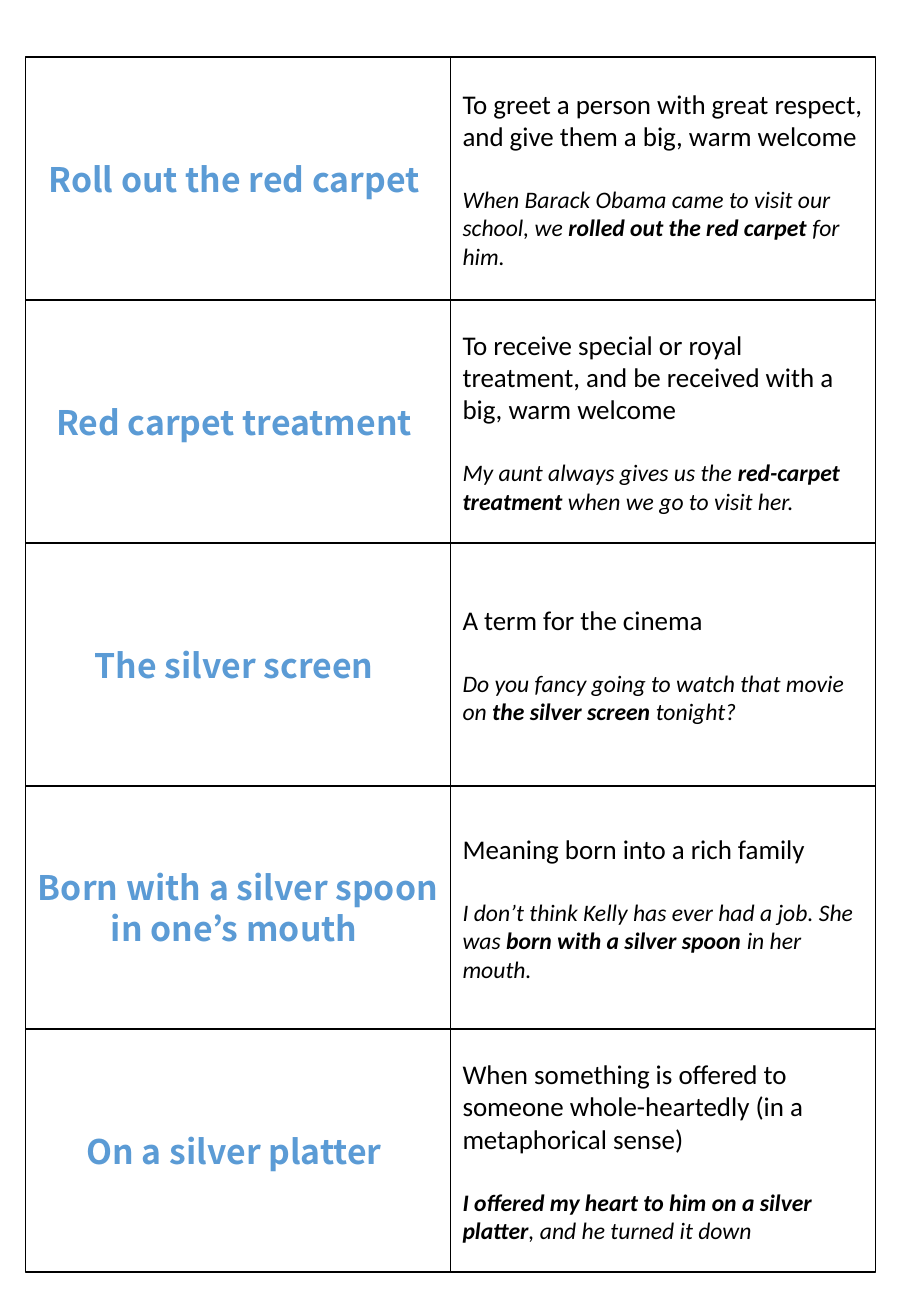
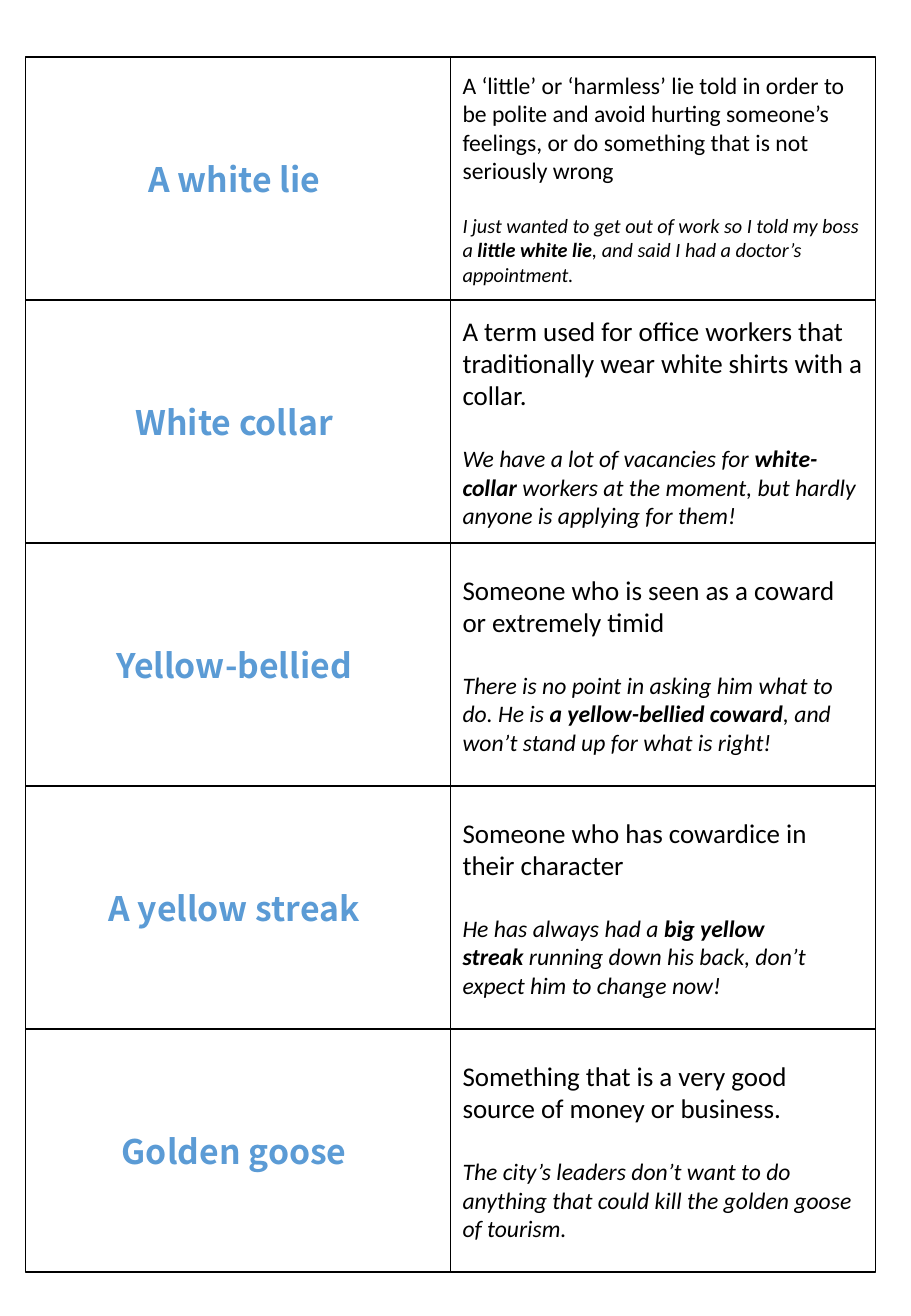
from dataclasses import dataclass

from pptx import Presentation
from pptx import util as u
from pptx.dml.color import RGBColor
from pptx.enum import shapes, text


@dataclass(frozen=True)
class Theme:
    ink: RGBColor = RGBColor(0x00, 0x00, 0x00)
    paper: RGBColor = RGBColor(0xFF, 0xFF, 0xFF)
    blue: RGBColor = RGBColor(0x5B, 0x9B, 0xD5)
    head: str = "Noto Sans CJK KR"
    body: str = "Calibri"
    title: int = 20
    large: int = 16
    small: int = 14
    step: int = 2        # an example is this much smaller than its meaning
    lead: float = 1.22   # line height of the body font
    rule: int = 1


@dataclass(frozen=True)
class Grid:
    left: float = 0.21
    top: float = 0.47
    wide: float = 3.5
    high: float = 2

    def box(self, col, row):
        return [u.Inches(n) for n in (self.left + col * self.wide,
                                      self.top + row * self.high,
                                      self.wide, self.high)]


THEME = Theme()
GRID = Grid()
NBSP = chr(160)

# Each card: idiom, meaning, example (idiom between asterisks), meaning size
PAGES = [
    [
        ("Roll out the red carpet",
         "To greet a person with great respect, and give them a big, warm welcome",
         "When Barack Obama came to visit our school, we *rolled out the red carpet* for him.",
         THEME.large),
        ("Red carpet treatment",
         "To receive special or royal treatment, and be received with a big, warm welcome",
         "My aunt always gives us the *red-carpet treatment* when we go to visit her.",
         THEME.large),
        ("The silver screen",
         "A term for the cinema",
         "Do you fancy going to watch that movie on *the silver screen* tonight?",
         THEME.large),
        ("Born with a silver spoon in one’s mouth",
         "Meaning born into a rich family",
         "I don’t think Kelly has ever had a job. She was *born with a silver spoon* in her mouth.",
         THEME.large),
        ("On a silver platter",
         "When something is offered to someone whole-heartedly (in a metaphorical sense)",
         "*I offered my heart to him on a silver platter*, and he turned it down",
         THEME.large),
    ],
    [
        ("A white lie",
         "A ‘little’ or ‘harmless’ lie told in order to be polite and avoid hurting "
         "someone’s feelings, or do something that is not seriously wrong",
         "I just wanted to get out of work so I told my boss a *little white lie*, "
         "and said I had a doctor’s appointment.",
         THEME.small),
        ("White collar",
         "A term used for office workers that traditionally wear white shirts with a collar.",
         "We have a lot of vacancies for *white-collar* workers at the moment, "
         "but hardly anyone is applying for them!",
         THEME.large),
        ("Yellow-bellied",
         "Someone who is seen as a coward or extremely timid",
         "There is no point in asking him what to do. He is *a yellow-bellied coward*, "
         "and won’t stand up for what is right!",
         THEME.large),
        ("A yellow streak",
         "Someone who has cowardice in their character",
         "He has always had a *big yellow streak* running down his back, "
         "don’t expect him to change now!",
         THEME.large),
        ("Golden goose",
         "Something that is a very good source of money or business.",
         "The city’s leaders don’t want to do anything that could kill the golden goose of tourism.",
         THEME.large),
    ],
]


def style(run, face, size, color, bold=False, italic=False):
    font = run.font
    font.name, font.size = face, u.Pt(size)
    font.bold, font.italic = bold, italic
    font.color.rgb = color


def add_cell(slide, box):
    """Draw a ruled box and return its text frame."""
    cell = slide.shapes.add_shape(shapes.MSO_SHAPE.RECTANGLE, *box)
    cell.shadow.inherit = False
    cell.fill.solid()
    cell.fill.fore_color.rgb = THEME.paper
    cell.line.color.rgb = THEME.ink
    cell.line.width = u.Pt(THEME.rule)
    frame = cell.text_frame
    frame.word_wrap = True
    frame.vertical_anchor = text.MSO_ANCHOR.MIDDLE
    return frame


def add_idiom(slide, box, idiom):
    para = add_cell(slide, box).paragraphs[0]
    para.text = idiom + " "
    para.alignment = text.PP_ALIGN.CENTER
    style(para.runs[0], THEME.head, THEME.title, THEME.blue, bold=True)


def add_sense(slide, box, meaning, example, size):
    """Place a meaning, then its example one line lower."""
    frame = add_cell(slide, box)
    first, last = frame.paragraphs[0], frame.add_paragraph()
    first.alignment = last.alignment = text.PP_ALIGN.LEFT
    first.text = meaning
    style(first.runs[0], THEME.body, size, THEME.ink)

    last.space_before = u.Pt(round(size * THEME.lead, 1))
    glued = example.replace(" *", NBSP + "*").replace("* ", "*" + NBSP)
    for i, part in enumerate(glued.split("*")):
        if part:
            run = last.add_run()
            run.text = part
            style(run, THEME.body, size - THEME.step, THEME.ink,
                  bold=i % 2 == 1, italic=True)


def add_page(deck, cards):
    slide = deck.slides.add_slide(deck.slide_layouts[6])
    for row, (idiom, meaning, example, size) in enumerate(cards):
        add_idiom(slide, GRID.box(0, row), idiom)
        add_sense(slide, GRID.box(1, row), meaning, example, size)


def main():
    deck = Presentation()
    deck.slide_width, deck.slide_height = u.Inches(7.5), u.Inches(10.83)
    for cards in PAGES:
        add_page(deck, cards)
    deck.save("out.pptx")


if __name__ == "__main__":
    main()
